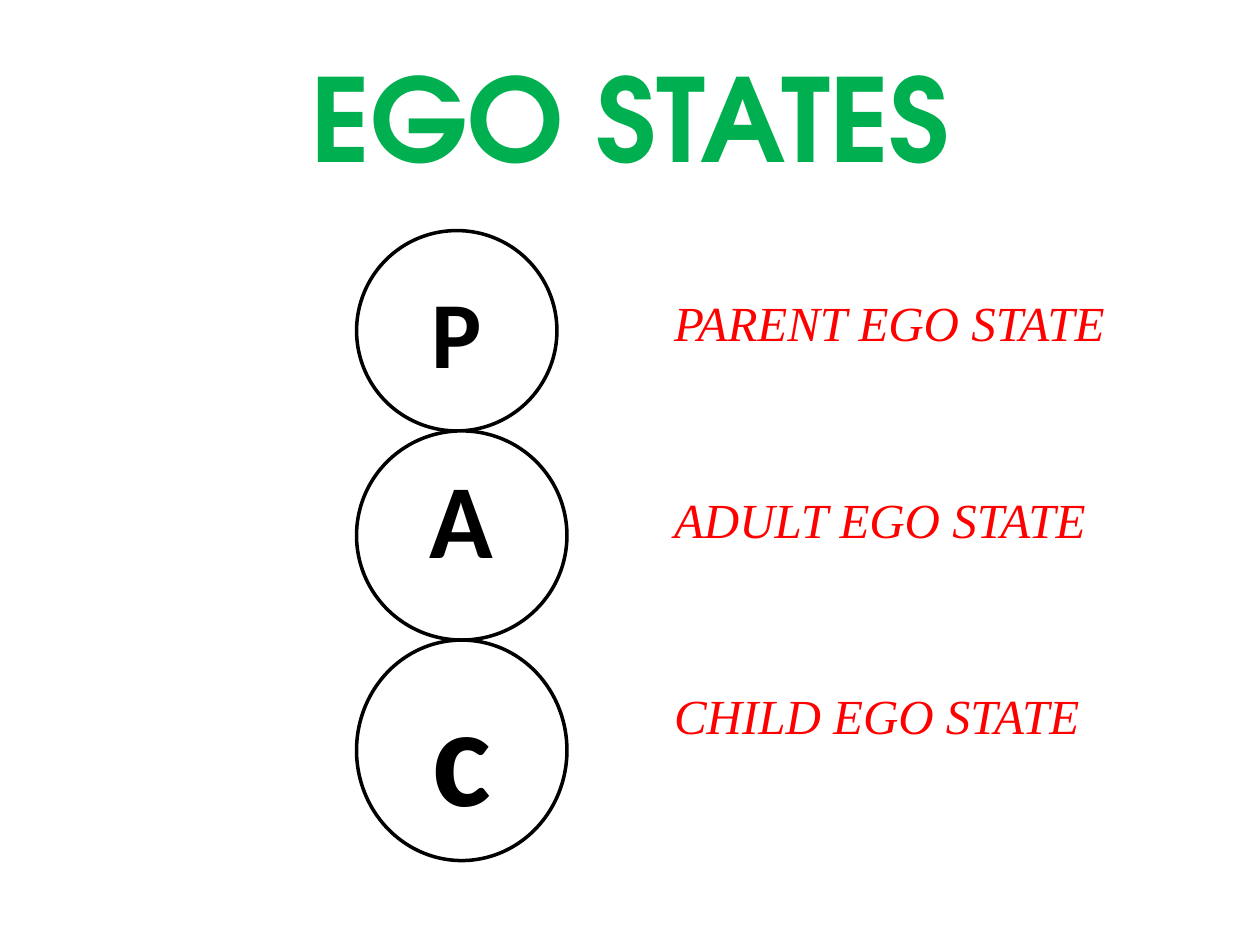
from pptx import Presentation
from pptx.dml.color import RGBColor
from pptx.enum.shapes import MSO_SHAPE
from pptx.enum.text import MSO_ANCHOR, MSO_AUTO_SIZE, PP_ALIGN
from pptx.oxml.xmlchemy import OxmlElement
from pptx.util import Inches, Pt

GREEN = RGBColor(0x00, 0xB0, 0x50)
RED = RGBColor(0xFF, 0x00, 0x00)
BLACK = RGBColor(0x00, 0x00, 0x00)
WHITE = RGBColor(0xFF, 0xFF, 0xFF)

STATES = ["PARENT EGO STATE", "ADULT EGO STATE", "CHILD EGO STATE"]
STACK_LEFT, STACK_TOP = 2.83, 1.83
# Letter, text size, circle width, circle height, bottom inset
CIRCLES = [
    ("P", 54, 1.59, 1.59, 0.05),
    ("A", 60, 1.67, 1.66, 0.35),
    ("c", 80, 1.67, 1.75, 0.05),
]


def place(shape, left, top, width, height):
    shape.left, shape.top = Inches(left), Inches(top)
    shape.width, shape.height = Inches(width), Inches(height)


def format_runs(paragraph, name, size, color, bold=False, italic=False):
    for run in paragraph.runs:
        font = run.font
        font.name, font.size = name, Pt(size)
        font.bold, font.italic = bold, italic
        font.color.rgb = color


def add_title(slide, text):
    title = slide.shapes.title
    place(title, 0.5, 0.3, 9, 1.25)
    text_frame = title.text_frame
    text_frame.text = text
    text_frame.auto_size = MSO_AUTO_SIZE.NONE
    text_frame.vertical_anchor = MSO_ANCHOR.MIDDLE
    paragraph = text_frame.paragraphs[0]
    paragraph.alignment = PP_ALIGN.CENTER
    format_runs(paragraph, "TeX Gyre Adventor", 66, GREEN, bold=True)


def add_state_list(slide, states):
    body = slide.placeholders[1]
    place(body, 1.25, 1.5, 7.75, 5.75)
    text_frame = body.text_frame
    text_frame.text = "\n".join(states)
    text_frame.auto_size = MSO_AUTO_SIZE.NONE
    text_frame.margin_top = Inches(0.59)
    for index, paragraph in enumerate(text_frame.paragraphs):
        paragraph.level = 8
        paragraph.line_spacing = 1.5
        paragraph.space_before = Pt(61.7 if index else 0)
        format_runs(paragraph, "Times New Roman", 28, RED, italic=True)
        # Indent without a bullet
        properties = paragraph._p.get_or_add_pPr()
        properties.set("marL", str(Inches(4.25)))
        properties.set("indent", str(Inches(-0.25)))
        properties.append(OxmlElement("a:buNone"))


def add_circle(slide, top, letter, size, width, height, bottom_inset):
    circle = slide.shapes.add_shape(
        MSO_SHAPE.OVAL, Inches(STACK_LEFT), Inches(top), Inches(width), Inches(height)
    )
    circle.shadow.inherit = False
    circle.fill.solid()
    circle.fill.fore_color.rgb = WHITE
    circle.line.color.rgb = BLACK
    circle.line.width = Pt(2)
    text_frame = circle.text_frame
    text_frame.text = letter
    text_frame.vertical_anchor = MSO_ANCHOR.MIDDLE
    text_frame.margin_bottom = Inches(bottom_inset)
    paragraph = text_frame.paragraphs[0]
    paragraph.alignment = PP_ALIGN.CENTER
    format_runs(paragraph, "Calibri", size, BLACK, bold=True)


def main():
    presentation = Presentation()
    presentation.slide_width, presentation.slide_height = Inches(10), Inches(7.5)
    slide = presentation.slides.add_slide(presentation.slide_layouts[1])

    add_title(slide, "EGO STATES")
    add_state_list(slide, STATES)

    # Circles stacked so that each touches the next
    top = STACK_TOP
    for letter, size, width, height, bottom_inset in CIRCLES:
        add_circle(slide, top, letter, size, width, height, bottom_inset)
        top += height

    presentation.save("out.pptx")


if __name__ == "__main__":
    main()
